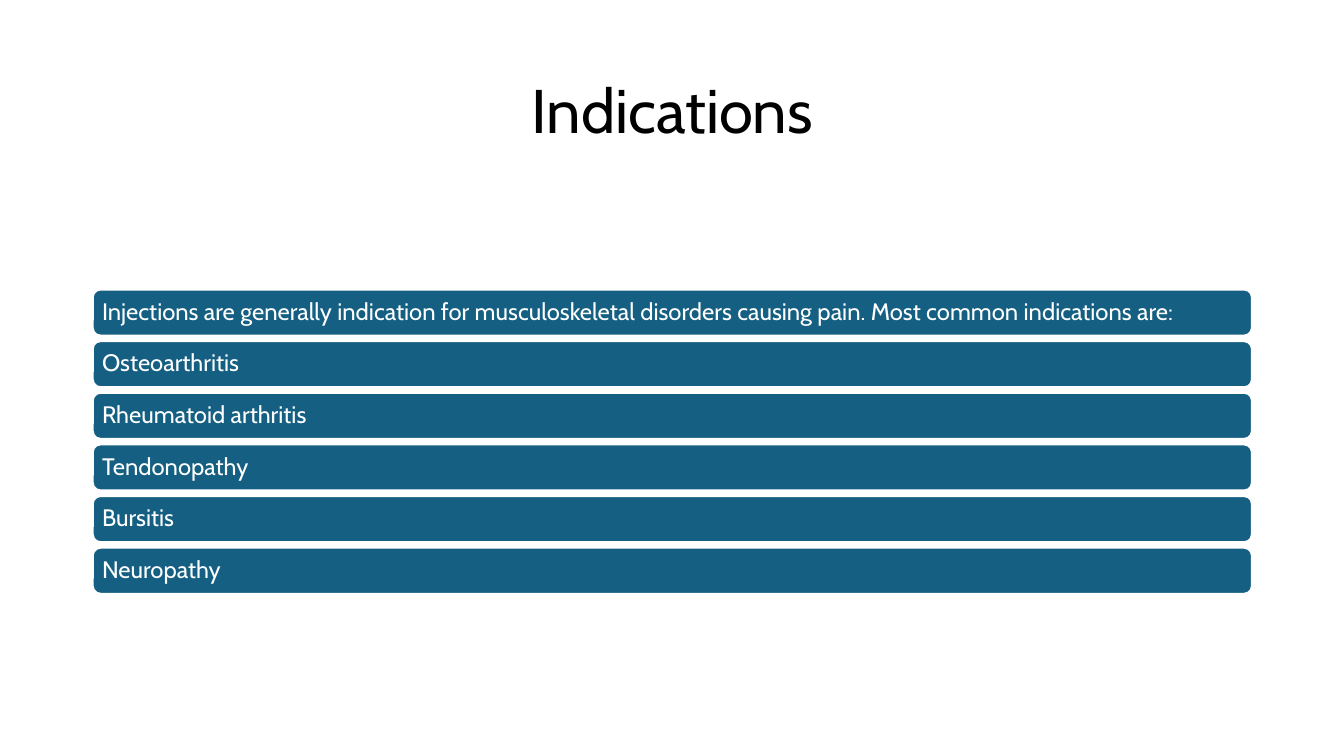
from pptx import Presentation
from pptx.dml.color import RGBColor
from pptx.enum.shapes import MSO_SHAPE
from pptx.enum.text import MSO_ANCHOR, MSO_AUTO_SIZE, PP_ALIGN
from pptx.util import Inches, Pt

BLUE = RGBColor(0x15, 0x60, 0x82)
WHITE = RGBColor(0xFF, 0xFF, 0xFF)
BLACK = RGBColor(0x00, 0x00, 0x00)

# Bar list, in percent of the slide's size
LEFT, WIDTH = 6.9, 86.25
TOP, STEP, HEIGHT = 38.3, 6.83, 6.1

ITEMS = [
    "Injections are generally indication for musculoskeletal disorders "
    "causing pain. Most common indications are:",
    "Osteoarthritis",
    "Rheumatoid arthritis",
    "Tendonopathy",
    "Bursitis",
    "Neuropathy",
]


class Deck:
    font = "Cabin"

    def __init__(self):
        self.prs = Presentation()
        self.prs.slide_width = Inches(13.33)
        self.prs.slide_height = Inches(7.5)
        self.slide = self.prs.slides.add_slide(self.prs.slide_layouts[5])

    def box(self, left, top, width, height):
        """Turn percentages of the slide into lengths."""
        wide, high = self.prs.slide_width, self.prs.slide_height
        return (int(wide * left / 100), int(high * top / 100),
                int(wide * width / 100), int(high * height / 100))

    def label(self, shape, text, size, color, align):
        frame = shape.text_frame
        frame.word_wrap = True
        frame.auto_size = MSO_AUTO_SIZE.NONE
        frame.vertical_anchor = MSO_ANCHOR.MIDDLE
        para = frame.paragraphs[0]
        para.alignment = align
        para.line_spacing = 0.9
        run = para.add_run()
        run.text = text
        run.font.name = self.font
        run.font.size = Pt(size)
        run.font.color.rgb = color
        return frame

    def title(self, text, *area):
        shape = self.slide.shapes.title
        shape.left, shape.top, shape.width, shape.height = self.box(*area)
        self.label(shape, text, 44, BLACK, PP_ALIGN.CENTER)

    def bar(self, text, *area):
        shape = self.slide.shapes.add_shape(
            MSO_SHAPE.ROUNDED_RECTANGLE, *self.box(*area))
        shape.shadow.inherit = False
        shape.fill.solid()
        shape.fill.fore_color.rgb = BLUE
        shape.line.color.rgb = WHITE
        shape.line.width = Pt(1.5)
        frame = self.label(shape, text, 17, WHITE, PP_ALIGN.LEFT)
        frame.margin_left = frame.margin_right = Inches(0.07)
        frame.margin_top = frame.margin_bottom = Inches(0.07)


def main():
    deck = Deck()
    # Heading
    deck.title("Indications", LEFT, 5.33, WIDTH, 19.33)
    # Stacked bars
    for row, item in enumerate(ITEMS):
        deck.bar(item, LEFT, TOP + row * STEP, WIDTH, HEIGHT)
    deck.prs.save("out.pptx")


if __name__ == "__main__":
    main()
